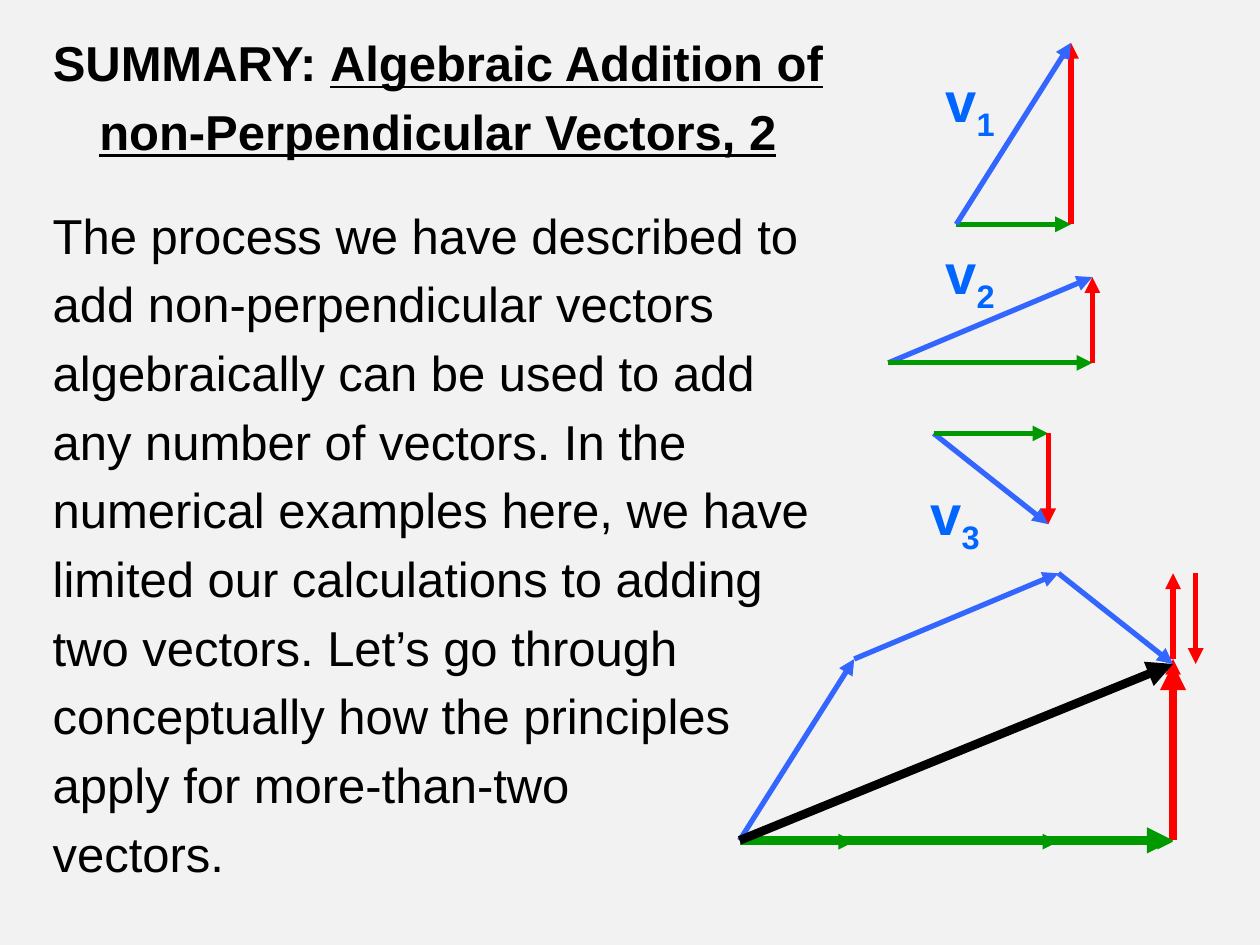
from lxml import etree
from pptx import Presentation
from pptx.dml.color import RGBColor
from pptx.enum.shapes import MSO_CONNECTOR
from pptx.enum.text import MSO_AUTO_SIZE, PP_ALIGN
from pptx.oxml.ns import qn
from pptx.util import Inches, Pt

STRAIGHT = MSO_CONNECTOR.STRAIGHT
CENTER, LEFT = PP_ALIGN.CENTER, PP_ALIGN.LEFT
GROW = MSO_AUTO_SIZE.SHAPE_TO_FIT_TEXT

BLACK, BLUE, GREEN, RED = "000000", "3366FF", "009900", "FF0000"
LABEL_BLUE, BACKGROUND = "0066FF", "F2F2F2"
THIN, THICK = 3, 5
HANGING = 0.38

# Title lines as (text, underlined) pieces
TITLE = [
    [("SUMMARY: ", False), ("Algebraic Addition of", True)],
    [("non-Perpendicular Vectors, 2", True)],
]
BODY = [
    "The process we have described to",
    "add non-perpendicular vectors",
    "algebraically can be used to add",
    "any number of vectors. In the",
    "numerical examples here, we have",
    "limited our calculations to adding",
    "two vectors. Let’s go through",
    "conceptually how the principles",
    "apply for more-than-two",
    "vectors.",
]

# Each vector: subscript, start, (x, y) components, label corner, drawing order
VECTORS = [
    ("1", (7.59, 1.78), (0.91, -1.44), (7.3, 0.48), "xyv"),
    ("2", (7.05, 2.88), (1.62, -0.68), (7.3, 1.84), "vxy"),
    ("3", (7.41, 3.44), (0.91, 0.72), (7.18, 3.76), "vxy"),
]
SUM_START = (5.87, 6.67)
DOWNWARD_SHIFT = 0.18  # keeps the downward component clear of the upward ones

prs = Presentation()
prs.slide_width, prs.slide_height = Inches(10), Inches(7.5)
slide = prs.slides.add_slide(prs.slide_layouts[6])


def rgb(value):
    return RGBColor.from_string(value)


def arrow(start, step, color, width=THIN):
    (x, y), (dx, dy) = start, step
    line = slide.shapes.add_connector(
        STRAIGHT, Inches(x), Inches(y), Inches(x + dx), Inches(y + dy))
    line.line.color.rgb = rgb(color)
    line.line.width = Pt(width)
    etree.SubElement(line.line._get_or_add_ln(), qn("a:tailEnd"), type="triangle")
    etree.SubElement(line._element.spPr, qn("a:effectLst"))


def text_box(left, top, width, height, wrap):
    box = slide.shapes.add_textbox(*map(Inches, (left, top, width, height)))
    box.text_frame.word_wrap = wrap
    return box.text_frame


def add_run(paragraph, text, size, color, bold=False, underline=False):
    run = paragraph.add_run()
    run.text = text
    font = run.font
    font.name, font.size, font.bold = "Arial", Pt(size), bold
    font.underline = underline
    font.color.rgb = rgb(color)
    return run


def hanging_lines(frame, lines, align, bold):
    frame.auto_size = GROW
    for i, pieces in enumerate(lines):
        paragraph = frame.add_paragraph() if i else frame.paragraphs[0]
        paragraph.alignment = align
        # Hanging indent and proportional space before
        props = paragraph._p.get_or_add_pPr()
        props.set("marL", str(Inches(HANGING)))
        props.set("indent", str(-Inches(HANGING)))
        before = etree.SubElement(props, qn("a:spcBef"))
        etree.SubElement(before, qn("a:spcPct"), val="20000")
        for text, underline in pieces:
            add_run(paragraph, text, 28, BLACK, bold, underline)


# Background
slide.background.fill.solid()
slide.background.fill.fore_color.rgb = rgb(BACKGROUND)

# Separate vectors with their components and labels
for subscript, start, (dx, dy), corner, order in VECTORS:
    parts = {
        "x": (start, (dx, 0), GREEN),
        "y": ((start[0] + dx, start[1]), (0, dy), RED),
        "v": (start, (dx, dy), BLUE),
    }
    for part in order:
        arrow(*parts[part])
    label = text_box(*corner, 0.8, 0.5, True).paragraphs[0]
    label.alignment = CENTER
    add_run(label, "v", 32, LABEL_BLUE, True)
    index = add_run(label, subscript, 32, LABEL_BLUE, True)
    index.font._element.set("baseline", "-25000")

# Vectors head to tail, with components along the bottom and right side
total = [sum(step[axis] for _, _, step, _, _ in VECTORS) for axis in (0, 1)]
right = SUM_START[0] + total[0]
x, y = SUM_START
for _, _, (dx, dy), _, _ in VECTORS:
    arrow((x, y), (dx, dy), BLUE)
    arrow((x, SUM_START[1] + 0.01), (dx, 0), GREEN)
    arrow((right + (DOWNWARD_SHIFT if dy > 0 else 0), y), (0, dy), RED)
    x, y = x + dx, y + dy

# Summed components and resultant
arrow((right, SUM_START[1]), (0, total[1]), RED, THICK)
arrow(SUM_START, (total[0], 0), GREEN, THICK)
arrow(SUM_START, total, BLACK, THICK)

# Body and title
hanging_lines(text_box(0.32, 1.58, 6.3, 5.66, False),
              [[(line, False)] for line in BODY], LEFT, False)
hanging_lines(text_box(0.29, 0.21, 6.37, 1.14, False), TITLE, CENTER, True)

prs.save("out.pptx")
